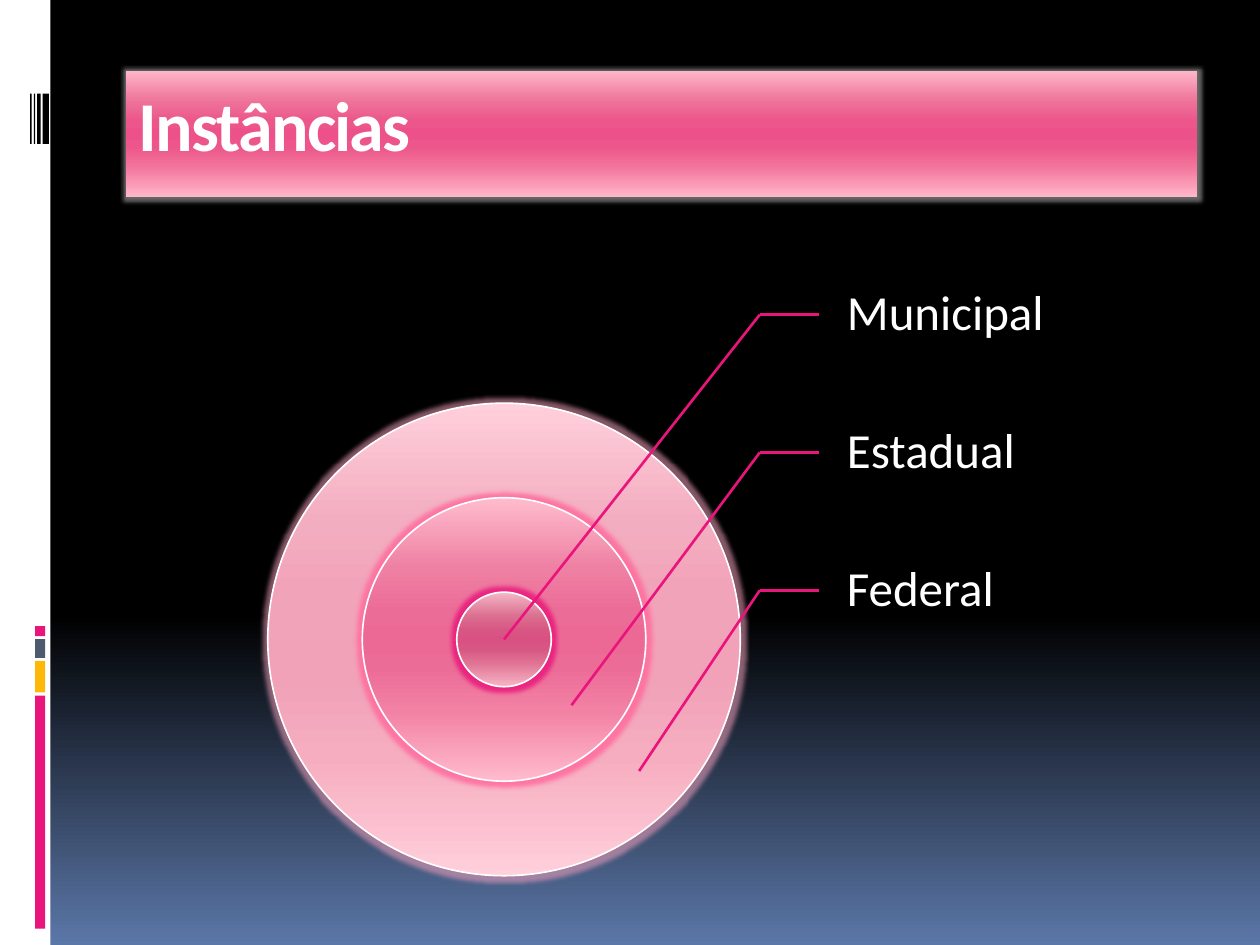
from lxml import etree
from pptx import Presentation
from pptx.dml.color import RGBColor
from pptx.enum import shapes, text
from pptx.oxml.ns import qn
from pptx.util import Pt

COLORS = {
    "white": "FFFFFF", "black": "000000", "pink": "EA157A",
    "amber": "FEB80A", "slate": "4E5B6F", "sky": "5B77A8",
    "outer glow": "F3A0BC", "middle glow": "FF6FA0",
}
FONT = "Calibri"
SHEEN_STOPS = (0, 25, 40, 50, 60, 75, 100)
TITLE_SHEEN = ("FFB6C9", "ED7198", "EC568B", "EC5289", "EC568B", "F2729A", "FFB6C9")

# Diameter, sheen, glow colour, glow opacity; outermost first
RINGS = [
    (270, ("FFCFDB", "F3ADC0", "F1A3B9", "F1A2B8", "F1A3B9", "F6ADC0", "FFCFDB"),
     "outer glow", 55),
    (162, ("FFBCCD", "EE80A3", "EC6C98", "EC6996", "EC6C98", "F281A4", "FFBBCD"),
     "middle glow", 90),
    (54, ("F4B8C7", "DB7091", "D85683", "D85180", "D85683", "E07394", "F7B5C5"),
     "pink", 80),
]
CENTER_X, CENTER_Y = 288, 365.4
LEVELS = ["Municipal", "Estadual", "Federal"]
LABEL_LEFT, LABEL_TOP, LABEL_WIDTH, LABEL_PITCH = 468, 140.4, 135, 78.75
ELBOW_X = 434.2
TARGET_STEP_X, TARGET_STEP_Y = 38.6, 37.6

# Left, top, width, height, colour
SIDE_STRIP = [
    (0, 0, 28.8, 540, "white"),
    (20, 397.5, 5.76, 133.2, "pink"),
    (20, 377.7, 5.76, 18, "amber"),
    (20, 365.2, 5.76, 10.8, "slate"),
    (20, 357.8, 5.76, 5.76, "pink"),
    (24.4, 53.5, 3.6, 28.8, "black"),
    (21.2, 53.5, 2, 28.8, "black"),
    (19.4, 53.5, 0.8, 28.8, "black"),
    (17.3, 53.5, 0.8, 28.8, "black"),
]


def rgb(name):
    return RGBColor.from_string(COLORS[name])


def fill_gradient(owner, fill, stops):
    """Fill from top to bottom with (percent, hex) stops."""
    fill.gradient()
    fill.gradient_angle = 270
    stop_list = next(owner.iter(qn("a:gsLst")))
    for old_stop in list(stop_list):
        stop_list.remove(old_stop)
    for percent, color in stops:
        stop = etree.SubElement(stop_list, qn("a:gs"), pos=str(percent * 1000))
        etree.SubElement(stop, qn("a:srgbClr"), val=color)


def add_glow(shape, color, radius, opacity):
    shape.shadow.inherit = False
    effects = shape._element.spPr.find(qn("a:effectLst"))
    glow = etree.SubElement(effects, qn("a:glow"), rad=str(Pt(radius)))
    tint = etree.SubElement(glow, qn("a:srgbClr"), val=COLORS[color])
    etree.SubElement(tint, qn("a:alpha"), val=str(opacity * 1000))


def write_text(shape, words, size, bold=False, anchor=text.MSO_ANCHOR.MIDDLE,
               insets=(7.2, 3.6, 7.2, 3.6), line_spacing=1.0, tracking=0):
    frame = shape.text_frame
    frame.word_wrap = True
    frame.auto_size = text.MSO_AUTO_SIZE.NONE
    frame.vertical_anchor = anchor
    (frame.margin_left, frame.margin_top,
     frame.margin_right, frame.margin_bottom) = map(Pt, insets)
    paragraph = frame.paragraphs[0]
    paragraph.alignment = text.PP_ALIGN.LEFT
    paragraph.line_spacing = line_spacing
    run = paragraph.add_run()
    run.text = words
    run.font.name = FONT
    run.font.size = Pt(size)
    run.font.bold = bold
    run.font.color.rgb = rgb("white")
    if tracking:
        run._r.get_or_add_rPr().set("spc", str(tracking * 100))


def add_bar(slide, left, top, width, height, color):
    bar = slide.shapes.add_shape(shapes.MSO_SHAPE.RECTANGLE,
                                 Pt(left), Pt(top), Pt(width), Pt(height))
    bar.fill.solid()
    bar.fill.fore_color.rgb = rgb(color)
    bar.line.fill.background()
    bar.shadow.inherit = False


def add_title(slide, words):
    title = slide.shapes.title
    title.left, title.top, title.width, title.height = map(Pt, (72, 40.5, 612, 72))
    fill_gradient(title._element, title.fill, zip(SHEEN_STOPS, TITLE_SHEEN))
    add_glow(title, "white", 5, 40)
    write_text(title, words, 40, bold=True, anchor=text.MSO_ANCHOR.TOP,
               insets=(7.2, 6, 7.2, 3.6), tracking=-1)


def add_ring(slide, diameter, sheen, glow, opacity):
    ring = slide.shapes.add_shape(
        shapes.MSO_SHAPE.OVAL, Pt(CENTER_X - diameter / 2),
        Pt(CENTER_Y - diameter / 2), Pt(diameter), Pt(diameter))
    fill_gradient(ring._element, ring.fill, zip(SHEEN_STOPS, sheen))
    ring.line.color.rgb = rgb("white")
    ring.line.width = Pt(0.94)
    add_glow(ring, glow, 5, opacity)


def add_leader(slide, start, end):
    leader = slide.shapes.add_connector(shapes.MSO_CONNECTOR.STRAIGHT,
                                        *map(Pt, start + end))
    leader.line.color.rgb = rgb("pink")
    leader.line.width = Pt(1.5)
    etree.SubElement(leader._element.spPr, qn("a:effectLst"))
    return leader


def add_level(slide, index, words):
    """A label whose leader bends at the elbow and ends in its ring."""
    top = LABEL_TOP + index * LABEL_PITCH
    label = slide.shapes.add_textbox(Pt(LABEL_LEFT), Pt(top),
                                     Pt(LABEL_WIDTH), Pt(LABEL_PITCH))
    write_text(label, words, 28, insets=(16, 2.8, 2.8, 2.8), line_spacing=0.9)

    elbow = (ELBOW_X, top + LABEL_PITCH / 2)
    target = (CENTER_X + index * TARGET_STEP_X, CENTER_Y + index * TARGET_STEP_Y)
    add_leader(slide, elbow, (LABEL_LEFT, elbow[1])).end_connect(label, 1)
    add_leader(slide, elbow, target)


def main():
    prs = Presentation()
    prs.slide_width, prs.slide_height = Pt(720), Pt(540)
    slide = prs.slides.add_slide(prs.slide_layouts[5])

    # Background and side strip
    fill_gradient(slide._element, slide.background.fill,
                  [(0, COLORS["black"]), (65, COLORS["black"]), (100, COLORS["sky"])])
    for bar in SIDE_STRIP:
        add_bar(slide, *bar)

    # Title
    add_title(slide, "Instâncias")

    # Concentric rings and their labels
    for ring in RINGS:
        add_ring(slide, *ring)
    for index, words in enumerate(LEVELS):
        add_level(slide, index, words)

    prs.save("out.pptx")


if __name__ == "__main__":
    main()
